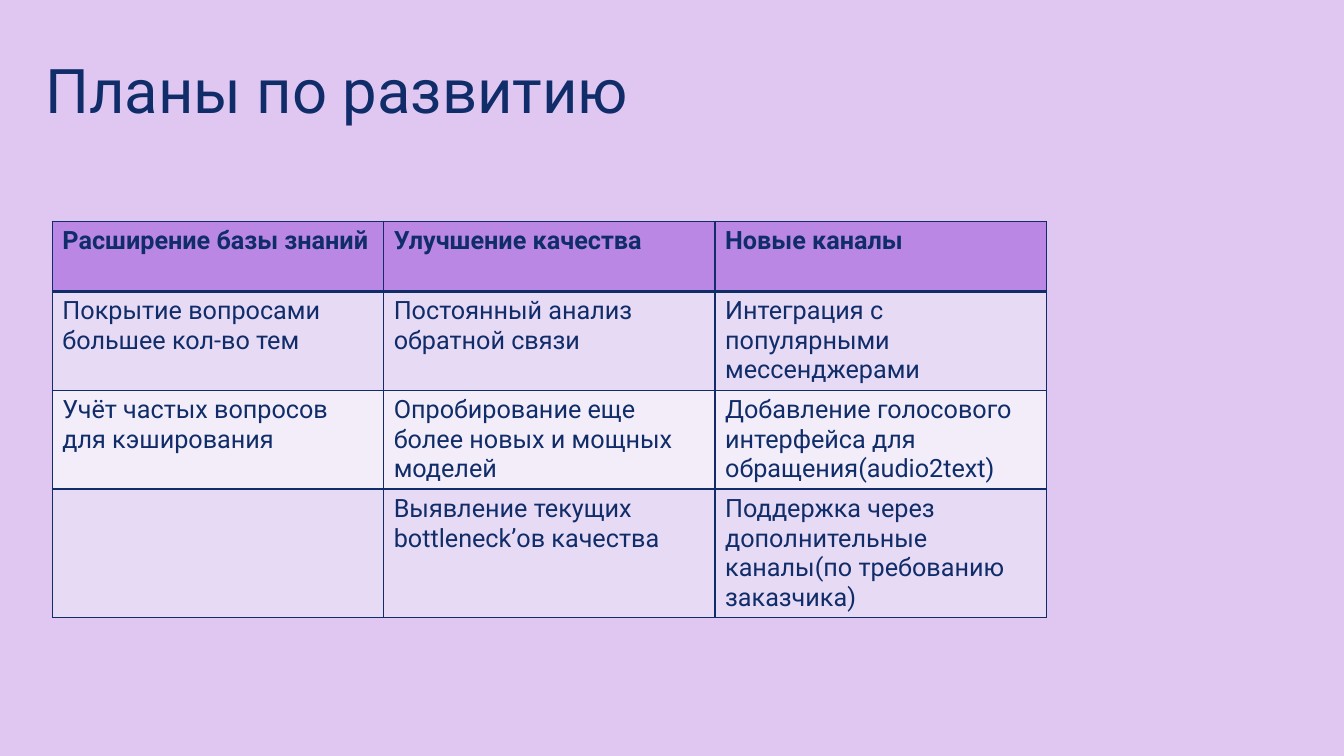
from lxml import etree
from pptx import Presentation
from pptx.dml.color import RGBColor
from pptx.enum.text import MSO_ANCHOR, PP_ALIGN
from pptx.oxml.ns import qn
from pptx.util import Pt

LEFT, MIDDLE = PP_ALIGN.LEFT, MSO_ANCHOR.MIDDLE
TITLE_ONLY = 5

COLORS = {
    "background": "DFC7F2",
    "ink": "102D69",
    "header": "BA88E4",
    "odd_row": "E7DAF5",
    "even_row": "F3EDFA",
}
TITLE_FONT = {"name": "Roboto", "size": Pt(44), "bold": False}
HEADER_FONT = {"name": "Roboto", "size": Pt(18), "bold": True}
CELL_FONT = {"name": "Roboto", "size": Pt(18), "bold": False}

PLANS = [
    ["Расширение базы знаний", "Улучшение качества", "Новые каналы"],
    ["Покрытие вопросами большее кол-во тем",
     "Постоянный анализ обратной связи",
     "Интеграция с популярными мессенджерами"],
    ["Учёт частых вопросов для кэширования",
     "Опробирование еще более новых и мощных моделей",
     "Добавление голосового интерфейса для обращения(audio2text)"],
    ["",
     "Выявление текущих bottleneck’ов качества",
     "Поддержка через дополнительные каналы(по требованию заказчика)"],
]
ROW_HEIGHTS = [50, 70.4, 70.4, 91.4]
COLUMN_WIDTH = 236.7


def format_text(paragraph, font_values):
    for attribute, value in font_values.items():
        setattr(paragraph.font, attribute, value)
    paragraph.font.color.rgb = RGBColor.from_string(COLORS["ink"])


def add_borders(cell, widths):
    properties = cell._tc.get_or_add_tcPr()
    for position, (side, width) in enumerate(widths.items()):
        line = etree.Element(qn(f"a:{side}"), w=str(Pt(width)))
        solid = etree.SubElement(line, qn("a:solidFill"))
        etree.SubElement(solid, qn("a:srgbClr"), val=COLORS["ink"])
        properties.insert(position, line)


# Slide and background
deck = Presentation()
deck.slide_width, deck.slide_height = Pt(960), Pt(540)
slide = deck.slides.add_slide(deck.slide_layouts[TITLE_ONLY])
slide.background.fill.solid()
slide.background.fill.fore_color.rgb = RGBColor.from_string(COLORS["background"])

# Title
title = slide.shapes.title
title.left, title.top, title.width, title.height = Pt(25.2), Pt(38.2), Pt(881.3), Pt(57.6)
title.text_frame.text = "Планы по развитию"
title.text_frame.vertical_anchor = MIDDLE
heading = title.text_frame.paragraphs[0]
heading.alignment = LEFT
heading.line_spacing = 0.9
format_text(heading, TITLE_FONT)

# Table of plans
plans = slide.shapes.add_table(
    len(PLANS), len(PLANS[0]), Pt(37.4), Pt(158.2),
    Pt(COLUMN_WIDTH * len(PLANS[0])), Pt(sum(ROW_HEIGHTS))).table
for column in plans.columns:
    column.width = Pt(COLUMN_WIDTH)

for row_index, (texts, height) in enumerate(zip(PLANS, ROW_HEIGHTS)):
    plans.rows[row_index].height = Pt(height)
    is_header = row_index == 0
    band = "header" if is_header else "odd_row" if row_index % 2 else "even_row"
    borders = {"lnL": 1, "lnR": 1,
               "lnT": 3 if row_index == 1 else 1,
               "lnB": 3 if is_header else 1}
    for column_index, text in enumerate(texts):
        cell = plans.cell(row_index, column_index)
        cell.text = text
        format_text(cell.text_frame.paragraphs[0], HEADER_FONT if is_header else CELL_FONT)
        cell.fill.solid()
        cell.fill.fore_color.rgb = RGBColor.from_string(COLORS[band])
        add_borders(cell, borders)

deck.save("out.pptx")
